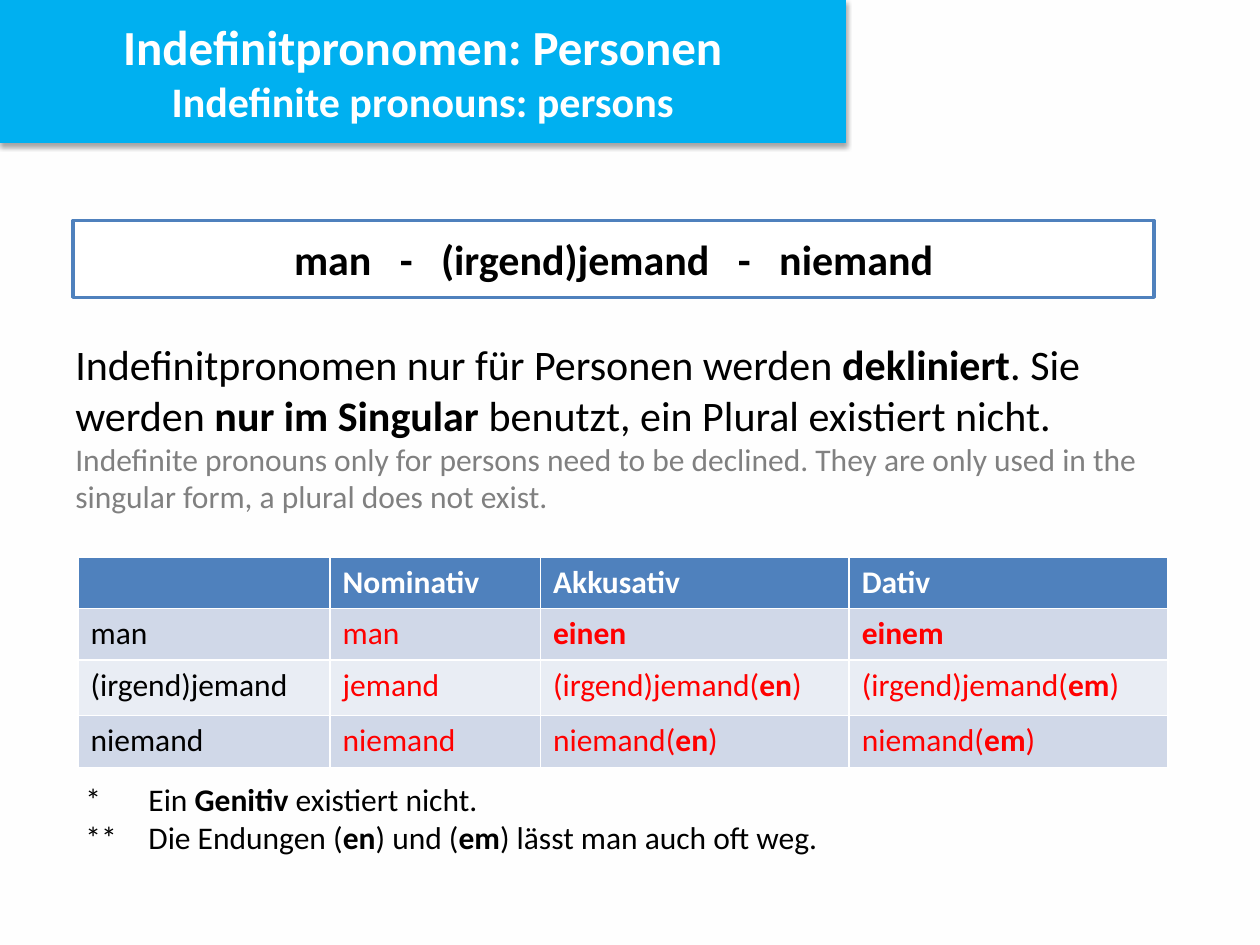
from lxml import etree
from pptx import Presentation, util as u
from pptx.dml.color import RGBColor
from pptx.enum import shapes, text
from pptx.oxml.ns import qn

BLACK, WHITE, GREY, RED = "000000", "FFFFFF", "808080", "FF0000"
SKY, BLUE, BANDS = "00B0F0", "4F81BD", ("D0D8E8", "E9EDF4")


def color(value):
    return RGBColor.from_string(value)


class Sheet:
    """A slide on a grid of 100 columns by 75 rows, with its text style."""
    font, unit = "Calibri", u.Inches(0.1)

    def __init__(self, presentation):
        presentation.slide_width, presentation.slide_height = 100 * self.unit, 75 * self.unit
        self.slide = presentation.slides.add_slide(presentation.slide_layouts[6])
        background = self.slide.background.fill
        background.solid()
        background.fore_color.rgb = color("FEFEFE")

    def place(self, *cells):
        return [round(cell * self.unit) for cell in cells]

    def style(self, font, size, ink, bold=None):
        font.name, font.size, font.bold = self.font, u.Pt(size), bold
        font.color.rgb = color(ink)

    def fill_paragraph(self, paragraph, content, size, ink, bold=None):
        """Fill a paragraph; parts between underscores are bold."""
        self.style(paragraph.font, size, ink, bold)
        for index, part in enumerate(content.split("_")):
            if part:
                run = paragraph.add_run()
                run.text = part
                if index % 2:
                    run.font.bold = True

    def add_line(self, paragraph, content, size, ink, bold=None):
        """Add a line in its own size and colour below the paragraph's text."""
        paragraph.add_line_break()
        run = paragraph.add_run()
        run.text = content
        self.style(run.font, size, ink, bold)

    def box(self, cells, fill, line, width):
        """Draw a rectangle and return it with its centred paragraph."""
        shape = self.slide.shapes.add_shape(shapes.MSO_SHAPE.RECTANGLE, *self.place(*cells))
        shape.shadow.inherit = False
        shape.fill.solid()
        shape.fill.fore_color.rgb = color(fill)
        shape.line.color.rgb = color(line)
        shape.line.width = u.Pt(width)
        shape.text_frame.vertical_anchor = text.MSO_ANCHOR.MIDDLE
        paragraph = shape.text_frame.paragraphs[0]
        paragraph.alignment = text.PP_ALIGN.CENTER
        return shape, paragraph

    def drop_shadow(self, shape):
        effects = shape._element.spPr.find(qn("a:effectLst"))
        shadow = etree.SubElement(effects, qn("a:outerShdw"), blurRad=str(u.Pt(3.1)),
                                  dist=str(u.Pt(1.8)), dir="5400000", rotWithShape="0")
        ink = etree.SubElement(shadow, qn("a:srgbClr"), val=BLACK)
        etree.SubElement(ink, qn("a:alpha"), val="35000")

    def text_box(self, cells):
        frame = self.slide.shapes.add_textbox(*self.place(*cells)).text_frame
        frame.word_wrap = True
        return frame

    def table(self, left, top, columns, rows, content):
        cells = left, top, sum(columns), sum(rows)
        table = self.slide.shapes.add_table(len(rows), len(columns), *self.place(*cells)).table
        for column, width in zip(table.columns, self.place(*columns)):
            column.width = width
        for row, height in zip(table.rows, self.place(*rows)):
            row.height = height
        for r, line in enumerate(content):
            for c, entry in enumerate(line):
                cell = table.cell(r, c)
                cell.fill.solid()
                cell.fill.fore_color.rgb = color(BANDS[(r - 1) % 2] if r else BLUE)
                ink = WHITE if r == 0 else RED if c else BLACK
                self.fill_paragraph(cell.text_frame.paragraphs[0], entry, 18, ink, r == 0)


def main():
    presentation = Presentation()
    sheet = Sheet(presentation)

    intro = sheet.text_box((5, 26.4, 89.4, 9.1)).paragraphs[0]
    sheet.fill_paragraph(intro, "Indefinitpronomen nur für Personen werden _dekliniert_. Sie "
                         "werden _nur im Singular _benutzt, ein Plural existiert nicht.",
                         24, BLACK)
    sheet.add_line(intro, "Indefinite pronouns only for persons need to be declined. They are "
                   "only used in the singular form, a plural does not exist.", 18, GREY)

    _, pronouns = sheet.box((5.8, 17.5, 85.8, 6.1), WHITE, BLUE, 2)
    sheet.fill_paragraph(pronouns, "man_ -_ (irgend)jemand_ -_ niemand", 24, BLACK, True)
    for dash in pronouns.runs[1::2]:
        dash._r.get_or_add_rPr().set("spc", "1080")  # wide gaps around the dash

    sheet.table(6.2, 44.2, (20, 16.7, 24.5, 25.3), (4.1, 4.1, 4.4, 4.1), (
        ("", "Nominativ", "Akkusativ", "Dativ"),
        ("man", "man", "_einen_", "_einem_"),
        ("(irgend)jemand", "jemand", "(irgend)jemand(_en_)", "(irgend)jemand(_em_)"),
        ("niemand", "niemand", "niemand(_en_)", "niemand(_em_)")))

    banner, title = sheet.box((0, 0, 67.1, 11.3), SKY, SKY, 0.75)
    sheet.drop_shadow(banner)
    sheet.fill_paragraph(title, "Indefinitpronomen: Personen", 28, WHITE, True)
    sheet.add_line(title, "Indefinite pronouns: persons", 24, WHITE, True)

    notes = sheet.text_box((5.8, 61.4, 89.7, 7.1))
    for index, note in enumerate(("* \tEin _Genitiv_ existiert nicht.",
                                  "** \tDie Endungen (_en_) und (_em_) lässt man auch oft weg.")):
        paragraph = notes.add_paragraph() if index else notes.paragraphs[0]
        properties = paragraph._p.get_or_add_pPr()
        properties.set("marL", str(u.Inches(0.5)))
        properties.set("indent", str(-u.Inches(0.5)))
        sheet.fill_paragraph(paragraph, note, 18, BLACK)

    presentation.save("out.pptx")


if __name__ == "__main__":
    main()
